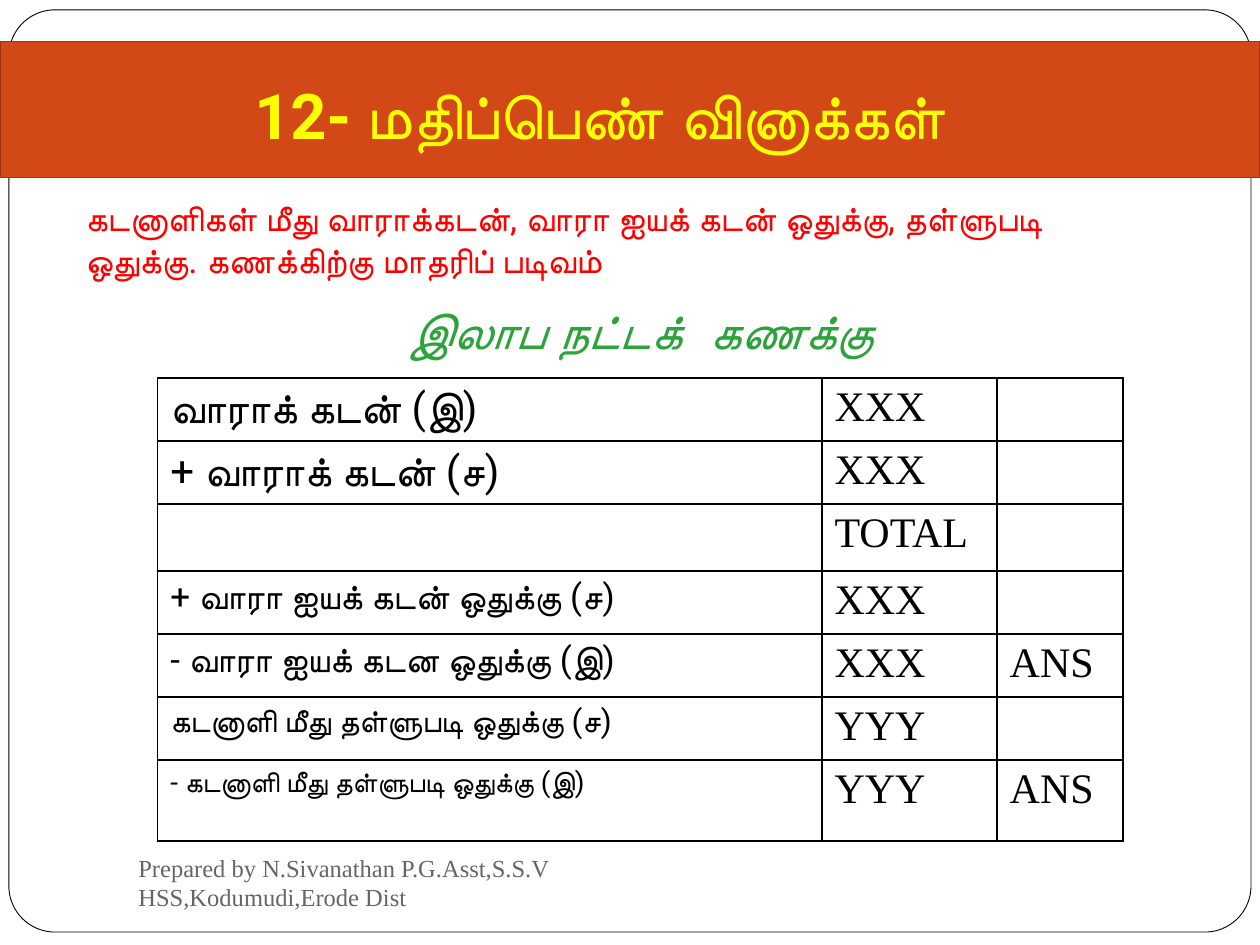
from pptx import Presentation
from pptx.dml.color import RGBColor
from pptx.enum.shapes import MSO_SHAPE
from pptx.enum.text import MSO_ANCHOR, PP_ALIGN
from pptx.oxml import parse_xml
from pptx.oxml.ns import nsdecls
from pptx.util import Cm, Pt

COLORS = {
    "paper": "FFFFFF",
    "ink": "000000",
    "band": "D34817",
    "band_edge": "9C3511",
    "title": "FFFF00",
    "intro": "FF0000",
    "heading": "2DA33B",
    "footer": "696464",
}
TAMIL = "Roboto"
LATIN = "Times New Roman"


def write(frame, text, *, size, font=TAMIL, color="ink", bold=False,
          italic=False, align=PP_ALIGN.LEFT, anchor=MSO_ANCHOR.TOP):
    frame.word_wrap = True
    frame.vertical_anchor = anchor
    paragraph = frame.paragraphs[0]
    paragraph.alignment = align
    run = paragraph.add_run()
    run.text = text
    run.font.size = Pt(size)
    run.font.name = font
    run.font.bold = bold
    run.font.italic = italic
    run.font.color.rgb = RGBColor.from_string(COLORS[color])


class SlideBuilder:
    def __init__(self, slide, colors):
        self.slide = slide
        self.colors = colors

    def color(self, name):
        return RGBColor.from_string(self.colors[name])

    def panel(self, kind, box, fill, line, width, corner=None):
        panel = self.slide.shapes.add_shape(kind, *map(Cm, box))
        panel.shadow.inherit = False
        panel.fill.solid()
        panel.fill.fore_color.rgb = self.color(fill)
        panel.line.color.rgb = self.color(line)
        panel.line.width = Pt(width)
        if corner is not None:
            panel.adjustments[0] = corner

    def title(self, text, box, **style):
        title = self.slide.shapes.title
        title.left, title.top, title.width, title.height = map(Cm, box)
        title.text_frame.margin_bottom = Cm(0.25)
        write(title.text_frame, text, **style)
        self.slide.shapes._spTree.append(title._element)

    def text(self, text, box, **style):
        write(self.slide.shapes.add_textbox(*map(Cm, box)).text_frame, text, **style)

    def border(self, cell):
        properties = cell._tc.get_or_add_tcPr()
        for side in ("lnL", "lnR", "lnT", "lnB"):
            properties.append(parse_xml(
                f'<a:{side} {nsdecls("a")} w="{Pt(1)}"><a:solidFill>'
                f'<a:srgbClr val="{self.colors["ink"]}"/></a:solidFill></a:{side}>'))

    def table(self, rows, left, top, widths, heights):
        table = self.slide.shapes.add_table(
            len(heights), len(widths), Cm(left), Cm(top),
            Cm(sum(widths)), Cm(sum(heights))).table
        table.first_row = table.horz_banding = False
        for column, width in zip(table.columns, widths):
            column.width = Cm(width)
        for row, height, (label, label_size, amount, answer) in zip(table.rows, heights, rows):
            row.height = Cm(height)
            entries = ((label, label_size, TAMIL), (amount, 24, LATIN), (answer, 24, LATIN))
            for cell, (text, size, font) in zip(row.cells, entries):
                self.border(cell)
                cell.fill.background()
                if text:
                    write(cell.text_frame, text, size=size, font=font)


def main():
    deck = Presentation()
    deck.slide_width, deck.slide_height = Cm(25.4), Cm(19.05)
    page = SlideBuilder(deck.slides.add_slide(deck.slide_layouts[5]), COLORS)

    page.panel(MSO_SHAPE.ROUNDED_RECTANGLE, (0.18, 0.2, 25.04, 18.59),
               "paper", "ink", 0.5, corner=0.05)
    page.panel(MSO_SHAPE.RECTANGLE, (0, 0.84, 25.4, 2.74), "band", "band_edge", 1)
    page.title("12- மதிப்பெண் வினாக்கள் ", (0.84, 1.47, 22.86, 1.85), size=36,
               color="title", bold=True, align=PP_ALIGN.CENTER, anchor=MSO_ANCHOR.BOTTOM)
    page.text("கடனாளிகள் மீது வாராக்கடன், வாரா ஐயக் கடன் ஒதுக்கு, தள்ளுபடி ஒதுக்கு. "
              "கணக்கிற்கு மாதரிப் படிவம்",
              (1.47, 3.84, 22.02, 1.96), size=20, color="intro")

    provisions = [
        ("வாராக் கடன் (இ)", 24, "XXX", ""),
        ("+ வாராக் கடன் (ச)", 24, "XXX", ""),
        ("", 24, "TOTAL", ""),
        ("+ வாரா ஐயக் கடன் ஒதுக்கு (ச)", 20, "XXX", ""),
        ("- வாரா ஐயக் கடன ஒதுக்கு (இ)", 20, "XXX", "ANS"),
        ("கடனாளி மீது தள்ளுபடி ஒதுக்கு (ச)", 18, "YYY", ""),
        ("- கடனாளி மீது தள்ளுபடி ஒதுக்கு (இ)", 16, "YYY", "ANS"),
    ]
    page.table(provisions, 3.18, 7.62, widths=(13.39, 3.53, 2.54),
               heights=(1.27, 1.27, 1.35, 1.27, 1.27, 1.27, 1.63))

    page.text("இலாப நட்டக்  கணக்கு", (1.9, 5.94, 22.02, 1.45), size=28,
              color="heading", bold=True, italic=True, align=PP_ALIGN.CENTER)
    page.text("Prepared by N.Sivanathan P.G.Asst,S.S.V HSS,Kodumudi,Erode Dist",
              (2.54, 17.15, 11, 1.27), size=14, font=LATIN, color="footer",
              anchor=MSO_ANCHOR.MIDDLE)
    deck.save("out.pptx")


if __name__ == "__main__":
    main()
